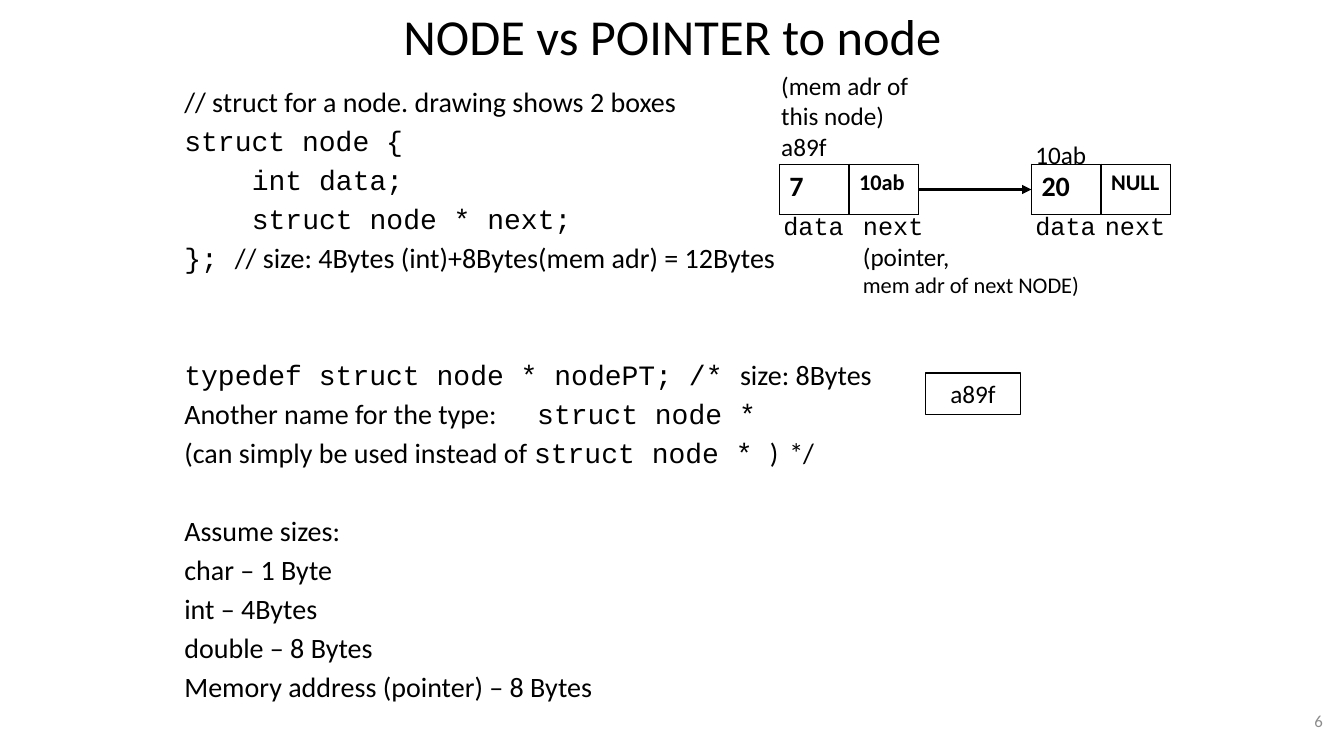
from dataclasses import dataclass

from lxml.etree import SubElement
from pptx import Presentation
from pptx.dml.color import RGBColor
from pptx.enum.shapes import MSO_CONNECTOR, MSO_SHAPE
from pptx.enum.text import MSO_ANCHOR, PP_ALIGN
from pptx.oxml.ns import qn
from pptx.slide import Slide
from pptx.text.text import TextFrame
from pptx.util import Emu, Pt

BLACK = RGBColor(0x00, 0x00, 0x00)
WHITE = RGBColor(0xFF, 0xFF, 0xFF)
GRAY = RGBColor(0x8C, 0x8C, 0x8C)
SANS = "Calibri"
MONO = "Courier New"

EMU_PER_PX = 9144  # 100 px to the inch
LINE_HEIGHT = Pt(24.4)
LINE_GAP = 3.5
LINE_PITCH = 27.9
CELL_WIDTH, CELL_HEIGHT = 69, 50
NODE_TOP = 163


def px(length: int) -> Emu:
    return Emu(length * EMU_PER_PX)


@dataclass(frozen=True)
class Line:
    text: str
    font: str = SANS
    size: int = 18


@dataclass(frozen=True)
class Label:
    left: int
    top: int
    width: int
    height: int
    lines: tuple[Line, ...]
    wrap: bool = False
    color: RGBColor = BLACK
    align: PP_ALIGN = PP_ALIGN.LEFT
    anchor: MSO_ANCHOR = MSO_ANCHOR.TOP


@dataclass(frozen=True)
class Node:
    left: int
    data: str
    next: str


@dataclass(frozen=True)
class BodyLine:
    """Runs of (text, font), with blank lines above, an indent and a tab stop."""
    runs: tuple[tuple[str, str], ...]
    blank_lines: int = 0
    indent: int = 0
    tab: int = 0


TITLE = Label(217, 8, 900, 54, (Line("NODE vs POINTER to node", size=36),), True,
              align=PP_ALIGN.CENTER, anchor=MSO_ANCHOR.MIDDLE)
SLIDE_NUMBER = Label(1011, 695, 311, 40, (Line("6", size=12),), True, GRAY,
                     PP_ALIGN.RIGHT, MSO_ANCHOR.MIDDLE)
DATA = Line("data", MONO)
NEXT = Line("next", MONO)
NODE_LABELS = (
    Label(767, 204, 81, 40, (DATA,)),
    Label(846, 204, 238, 98,
          (NEXT, Line("(pointer,"), Line("mem adr of next NODE)", size=16))),
    Label(765, 65, 165, 101, (Line("(mem adr of this node)"), Line("a89f")), True),
    Label(1017, 204, 81, 40, (DATA,)),
    Label(1086, 204, 81, 40, (NEXT,)),
    Label(1017, 133, 71, 40, (Line("10ab"),)),
)
NODES = (Node(773, "7", "10ab"), Node(1023, "20", "NULL"))

BODY = (
    BodyLine((("// struct for a node. drawing shows 2 boxes", SANS),)),
    BodyLine((("struct node {", MONO),)),
    BodyLine((("int data;", MONO),), indent=67),
    BodyLine((("struct node * next;", MONO),), indent=67),
    BodyLine((("}; ", MONO),
              ("// size: 4Bytes (int)+8Bytes(mem adr) = 12Bytes", SANS))),
    BodyLine((("typedef struct node * nodePT; /* ", MONO), ("size: 8Bytes", SANS)),
             blank_lines=2),
    BodyLine((("Another name for the type:\t", SANS), ("struct node *", MONO)), tab=336),
    BodyLine((("(can simply be used instead of ", SANS), ("struct node * ", MONO),
              (")\t*/", SANS)), tab=608),
    BodyLine((("Assume sizes:", SANS),), blank_lines=1),
    BodyLine((("char – 1 Byte", SANS),)),
    BodyLine((("int – 4Bytes", SANS),)),
    BodyLine((("double – 8 Bytes", SANS),)),
    BodyLine((("Memory address (pointer) – 8 Bytes", SANS),)),
)


def add_lines(frame: TextFrame, lines: tuple[Line, ...], color: RGBColor = BLACK,
              align: PP_ALIGN = PP_ALIGN.LEFT, bold: bool = False) -> None:
    for index, line in enumerate(lines):
        paragraph = frame.add_paragraph() if index else frame.paragraphs[0]
        paragraph.text = line.text
        paragraph.alignment = align
        paragraph.font.name = line.font
        paragraph.font.size = Pt(line.size)
        paragraph.font.bold = bold
        paragraph.font.color.rgb = color


def add_label(slide: Slide, label: Label) -> None:
    frame = slide.shapes.add_textbox(
        px(label.left), px(label.top), px(label.width), px(label.height)).text_frame
    frame.word_wrap = label.wrap
    frame.vertical_anchor = label.anchor
    add_lines(frame, label.lines, label.color, label.align)


def add_body(slide: Slide) -> None:
    frame = slide.shapes.add_textbox(px(173), px(78), px(986), px(657)).text_frame
    frame.word_wrap = True
    for index, line in enumerate(BODY):
        paragraph = frame.add_paragraph() if index else frame.paragraphs[0]
        paragraph.line_spacing = LINE_HEIGHT
        paragraph.space_before = Pt(LINE_GAP + line.blank_lines * LINE_PITCH if index else 0)
        properties = paragraph._p.get_or_add_pPr()
        properties.set("marL", str(px(line.indent)))
        properties.set("indent", "0")
        if line.tab:
            tab_list = SubElement(properties, qn("a:tabLst"))
            SubElement(tab_list, qn("a:tab"), pos=str(px(line.tab)), algn="l")
        paragraph.font.size = Pt(20)
        paragraph.font.color.rgb = BLACK
        for text, font in line.runs:
            run = paragraph.add_run()
            run.text = text
            run.font.name = font


def add_node(slide: Slide, node: Node) -> None:
    table = slide.shapes.add_table(1, 2, px(node.left), px(NODE_TOP),
                                   px(2 * CELL_WIDTH), px(CELL_HEIGHT)).table
    table.first_row = False
    table.horz_banding = False
    fields = (Line(node.data, size=20), Line(node.next, size=16))
    for cell, field in zip(table.iter_cells(), fields):
        add_lines(cell.text_frame, (field,), bold=True)
        properties = cell._tc.get_or_add_tcPr()
        for side in ("lnL", "lnR", "lnT", "lnB"):
            border = SubElement(properties, qn(f"a:{side}"), w=str(Pt(1)))
            fill = SubElement(border, qn("a:solidFill"))
            SubElement(fill, qn("a:srgbClr"), val=str(BLACK))
        cell.fill.background()


def add_pointer_box(slide: Slide) -> None:
    shape = slide.shapes.add_shape(MSO_SHAPE.RECTANGLE, px(918), px(370), px(94), px(41))
    shape.shadow.inherit = False
    shape.fill.solid()
    shape.fill.fore_color.rgb = WHITE
    shape.line.color.rgb = BLACK
    shape.line.width = Pt(1)
    shape.text_frame.vertical_anchor = MSO_ANCHOR.MIDDLE
    add_lines(shape.text_frame, (Line("a89f"),), align=PP_ALIGN.CENTER)


def add_next_arrow(slide: Slide, source: Node, target: Node) -> None:
    middle = px(NODE_TOP + CELL_HEIGHT // 2)
    arrow = slide.shapes.add_connector(
        MSO_CONNECTOR.STRAIGHT, px(source.left + 2 * CELL_WIDTH), middle,
        px(target.left), middle)
    arrow.line.color.rgb = BLACK
    arrow.line.width = Pt(2.25)
    SubElement(arrow.line._get_or_add_ln(), qn("a:tailEnd"), type="triangle")
    SubElement(arrow._element.spPr, qn("a:effectLst"))


def main() -> None:
    presentation = Presentation()
    presentation.slide_width = px(1333)
    presentation.slide_height = px(750)
    slide = presentation.slides.add_slide(presentation.slide_layouts[6])
    add_label(slide, TITLE)
    add_body(slide)
    add_label(slide, SLIDE_NUMBER)
    for node in NODES:
        add_node(slide, node)
    for label in NODE_LABELS:
        add_label(slide, label)
    add_pointer_box(slide)
    add_next_arrow(slide, *NODES)
    presentation.save("out.pptx")


if __name__ == "__main__":
    main()
